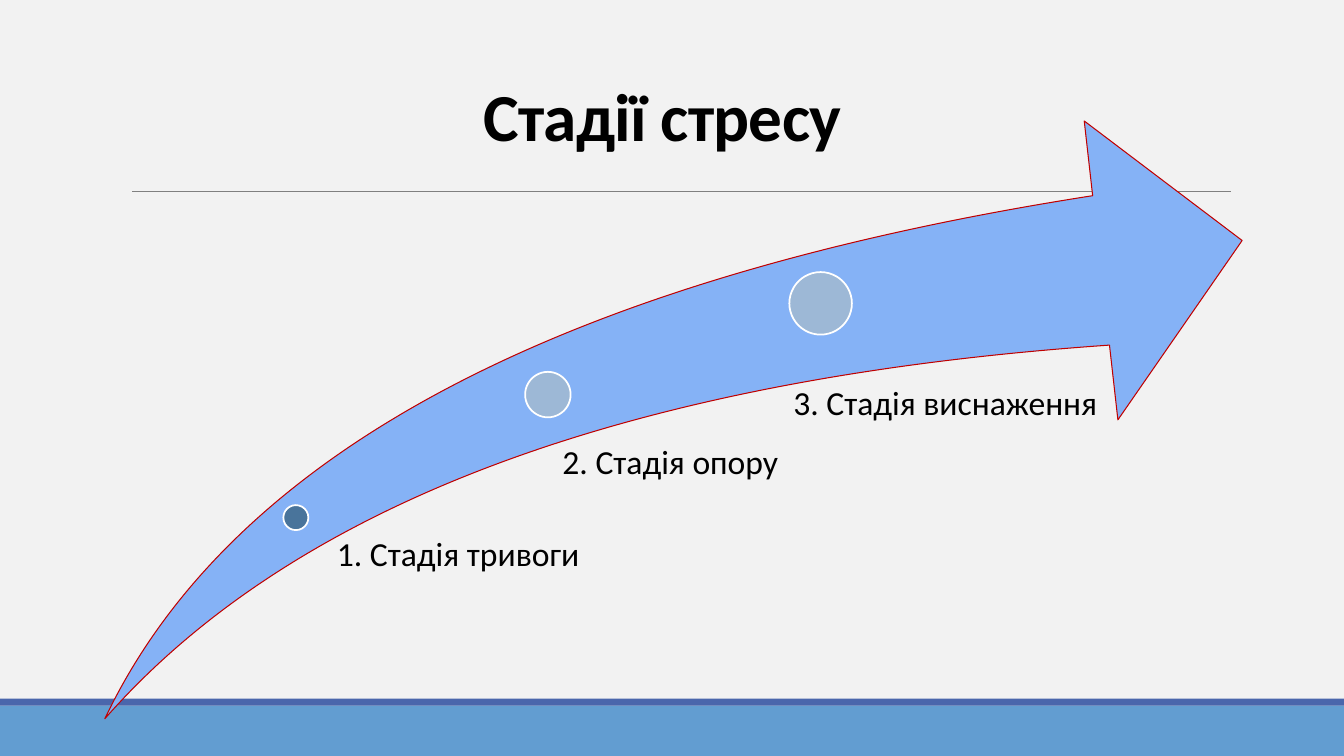
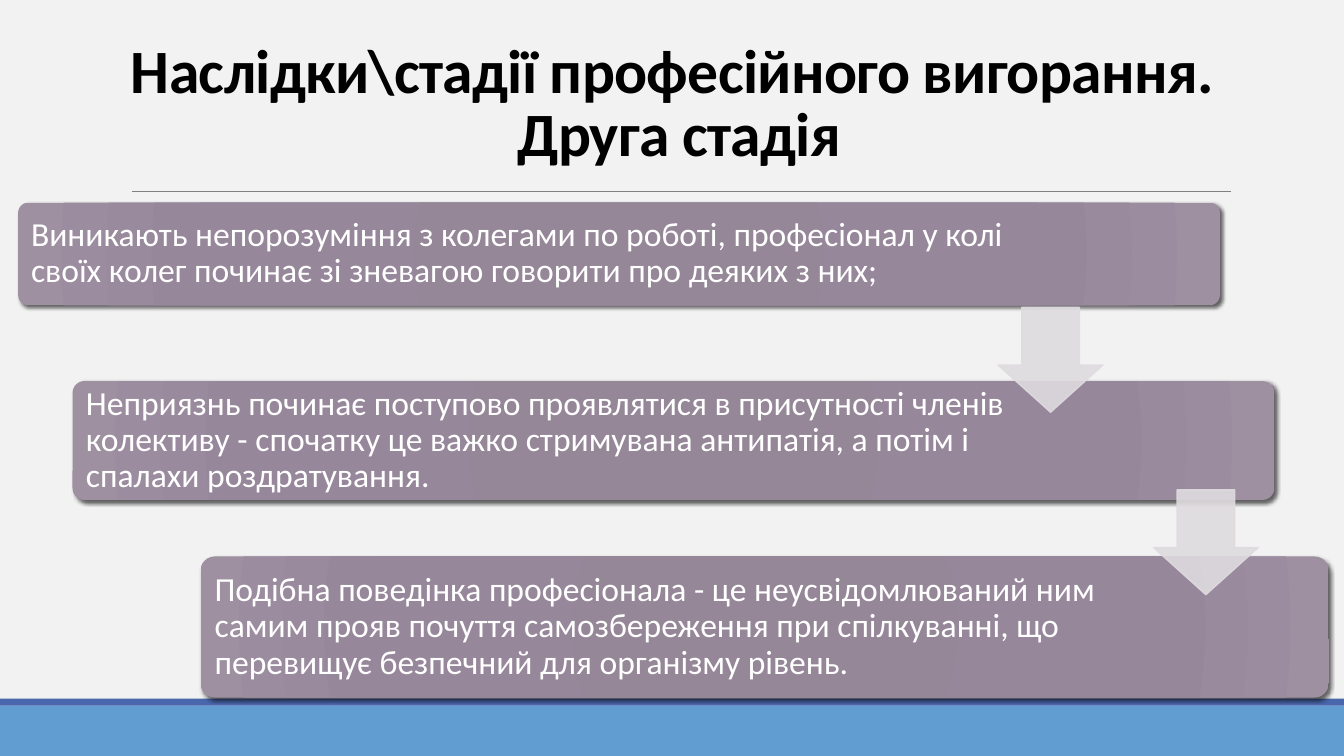
from lxml import etree
from pptx import Presentation
from pptx.dml.color import RGBColor
from pptx.enum.shapes import MSO_CONNECTOR, MSO_SHAPE
from pptx.enum.text import MSO_ANCHOR, PP_ALIGN
from pptx.oxml.ns import nsdecls, qn
from pptx.util import Inches, Pt

RECT, OVAL, CARD = MSO_SHAPE.RECTANGLE, MSO_SHAPE.OVAL, MSO_SHAPE.ROUNDED_RECTANGLE
SWOOSH, DOWN = MSO_SHAPE.SWOOSH_ARROW, MSO_SHAPE.DOWN_ARROW
STRAIGHT = MSO_CONNECTOR.STRAIGHT
TOP, MIDDLE, BOTTOM = MSO_ANCHOR.TOP, MSO_ANCHOR.MIDDLE, MSO_ANCHOR.BOTTOM
LEFT, CENTER = PP_ALIGN.LEFT, PP_ALIGN.CENTER

FONT = "Calibri"
SLIDE = (0, 0, 13.33, 7.5)
COLORS = {
    "page": "F2F2F2", "band": "629DD1", "stripe": "4A66AC", "rule": "808080",
    "ink": "000000", "white": "FFFFFF", "swoosh": "85B2F6", "edge": "C00000",
    "dot": "49749B", "pale_dot": "9DB8D6", "arrow": "DFDBDF",
}
CARD_STOPS = [(0, "948497"), (34, "958698"), (70, "97879B"), (100, "9E8FA1")]

STAGES = [
    ("1. Стадія тривоги", "dot", (16.8, 66.36), 2.2, (19.24, 69.65, 32.27, 21.75)),
    ("2. Стадія опору", "pale_dot", (38.96, 45.78), 4, (38.12, 54.3, 30.59, 20.57)),
    ("3. Стадія виснаження", "pale_dot", (62.94, 30.52), 5.5, (57.62, 44.35, 44.06, 19.22)),
]
STEPS = [
    ("Виникають непорозуміння з колегами по роботі, професіонал у колі своїх колег "
     "починає зі зневагою говорити про деяких з них;", (0, 0, 91.69, 20.77), 0.17),
    ("Неприязнь починає поступово проявлятися в присутності членів колективу - "
     "спочатку це важко стримувана антипатія, а потім і спалахи роздратування.",
     (4.15, 36.05, 91.69, 24.03), 0.2),
    ("Подібна поведінка професіонала - це неусвідомлюваний ним самим прояв почуття "
     "самозбереження при спілкуванні, що перевищує безпечний для організму рівень.",
     (13.92, 71.49, 86.08, 28.51), 0.2),
]
STEP_ARROWS = [(74.77, 21.18), (86.62, 58.04)]


def rgb(name):
    """Return a named colour."""
    return RGBColor.from_string(COLORS[name])


def within(box, x, y, w, h):
    """Turn percentages of a box into a box in inches."""
    left, top, width, height = box
    return (left + width * x / 100, top + height * y / 100, width * w / 100, height * h / 100)


def add_shape(slide, kind, box, fill=None, line=None, width=1, adj=()):
    """Add a flat preset shape with optional fill, outline and adjustments."""
    sp = slide.shapes.add_shape(kind, *map(Inches, box))
    sp.shadow.inherit = False
    for i, value in enumerate(adj):
        sp.adjustments[i] = value
    if fill:
        sp.fill.solid()
        sp.fill.fore_color.rgb = rgb(fill)
    if line:
        sp.line.color.rgb = rgb(line)
        sp.line.width = Pt(width)
    else:
        sp.line.fill.background()
    return sp


def write(sp, text, size, color, anchor=TOP, align=LEFT, spacing=0.9,
          insets=(0, 0, 0, 0), bold=False, track=0):
    """Write one paragraph, with line breaks where the text has them."""
    tf = sp.text_frame
    tf.word_wrap = True
    tf.vertical_anchor = anchor
    tf.margin_left, tf.margin_top, tf.margin_right, tf.margin_bottom = map(Inches, insets)
    p = tf.paragraphs[0]
    p.alignment, p.line_spacing = align, spacing
    for i, part in enumerate(text.split("\n")):
        if i:
            p.add_line_break()
        r = p.add_run()
        r.text = part
        r.font.name, r.font.size, r.font.bold = FONT, Pt(size), bold
        r.font.color.rgb = rgb(color)
        if track:
            r._r.get_or_add_rPr().set("spc", str(track))


def shade_card(sp):
    """Give a card its radial gradient and soft shadow."""
    stops = "".join(f'<a:gs pos="{pos * 1000}"><a:srgbClr val="{c}"/></a:gs>'
                    for pos, c in CARD_STOPS)
    grad = etree.fromstring(
        f'<a:gradFill {nsdecls("a")} rotWithShape="1"><a:gsLst>{stops}</a:gsLst>'
        '<a:path path="circle"><a:fillToRect l="100000" t="100000" r="100000" b="100000"/>'
        '</a:path></a:gradFill>')
    props = sp._element.spPr
    props.find(qn("a:prstGeom")).addnext(grad)
    shadow = etree.SubElement(props.find(qn("a:effectLst")), qn("a:outerShdw"),
                              blurRad=str(Pt(3)), dist=str(Pt(2)), dir="2700000",
                              rotWithShape="0")
    color = etree.SubElement(shadow, qn("a:srgbClr"), val=COLORS["ink"])
    etree.SubElement(color, qn("a:alpha"), val="60000")


def add_page(prs, title, box, size):
    """Add a slide with the shared background, bands, rule and title."""
    slide = prs.slides.add_slide(prs.slide_layouts[6])
    slide.background.fill.solid()
    slide.background.fill.fore_color.rgb = rgb("page")
    add_shape(slide, RECT, within(SLIDE, 0, 93.33, 100, 6.67), "band")
    add_shape(slide, RECT, within(SLIDE, 0, 92.4, 100, 0.93), "stripe")
    x, y, w, _ = map(Inches, within(SLIDE, 9.83, 25.33, 81.77, 0))
    rule = slide.shapes.add_connector(STRAIGHT, x, y, x + w, y)
    rule.line.color.rgb = rgb("rule")
    rule.line.width = Pt(0.5)
    etree.SubElement(rule._element.spPr, qn("a:effectLst"))
    sp = slide.shapes.add_textbox(*map(Inches, within(SLIDE, *box)))
    write(sp, title, size, "ink", BOTTOM, CENTER, 0.85, (0.1, 0.05, 0.1, 0.05), True, -50)
    return slide


def add_stages(slide, box):
    """Draw the rising arrow with a growing dot and a label for each stage."""
    add_shape(slide, SWOOSH, box, "swoosh", "edge", 0.75, (0.25, 0.25))
    for text, color, (cx, cy), share, label in STAGES:
        d = box[2] * share / 100
        x, y, _, _ = within(box, cx, cy, 0, 0)
        add_shape(slide, OVAL, (x - d / 2, y - d / 2, d, d), color, "white", 1.25)
        sp = slide.shapes.add_textbox(*map(Inches, within(box, *label)))
        write(sp, text, 24, "ink", insets=(d * 0.53, 0, 0, 0))


def add_steps(slide, box):
    """Draw the staggered cards and the arrows that link them."""
    for text, area, margin in STEPS:
        card = within(box, *area)
        sp = add_shape(slide, CARD, card, adj=(0.1,))
        shade_card(sp)
        write(sp, text, 24, "white", MIDDLE, insets=(0.1, 0, card[2] * margin, 0))
    for x, y in STEP_ARROWS:
        sp = add_shape(slide, DOWN, within(box, x, y, 8, 21.18), "arrow", "arrow",
                       adj=(0.55, 0.45))
        for color in sp._element.spPr.iter(qn("a:srgbClr")):
            etree.SubElement(color, qn("a:alpha"), val="90000")


def main():
    """Build and save the two slides."""
    prs = Presentation()
    prs.slide_width, prs.slide_height = map(Inches, SLIDE[2:])
    slide = add_page(prs, "Стадії стресу", (6.15, 1.87, 86.27, 19.33), 48)
    add_stages(slide, within(SLIDE, 7.8, 16, 84.62, 79.07))
    slide = add_page(prs, "Наслідки\\стадії професійного вигорання. \nДруга стадія",
                     (4.13, 12.13, 92.8, 10.93), 44)
    add_steps(slide, within(SLIDE, 1.35, 26.8, 97.52, 65.47))
    prs.save("out.pptx")


if __name__ == "__main__":
    main()
